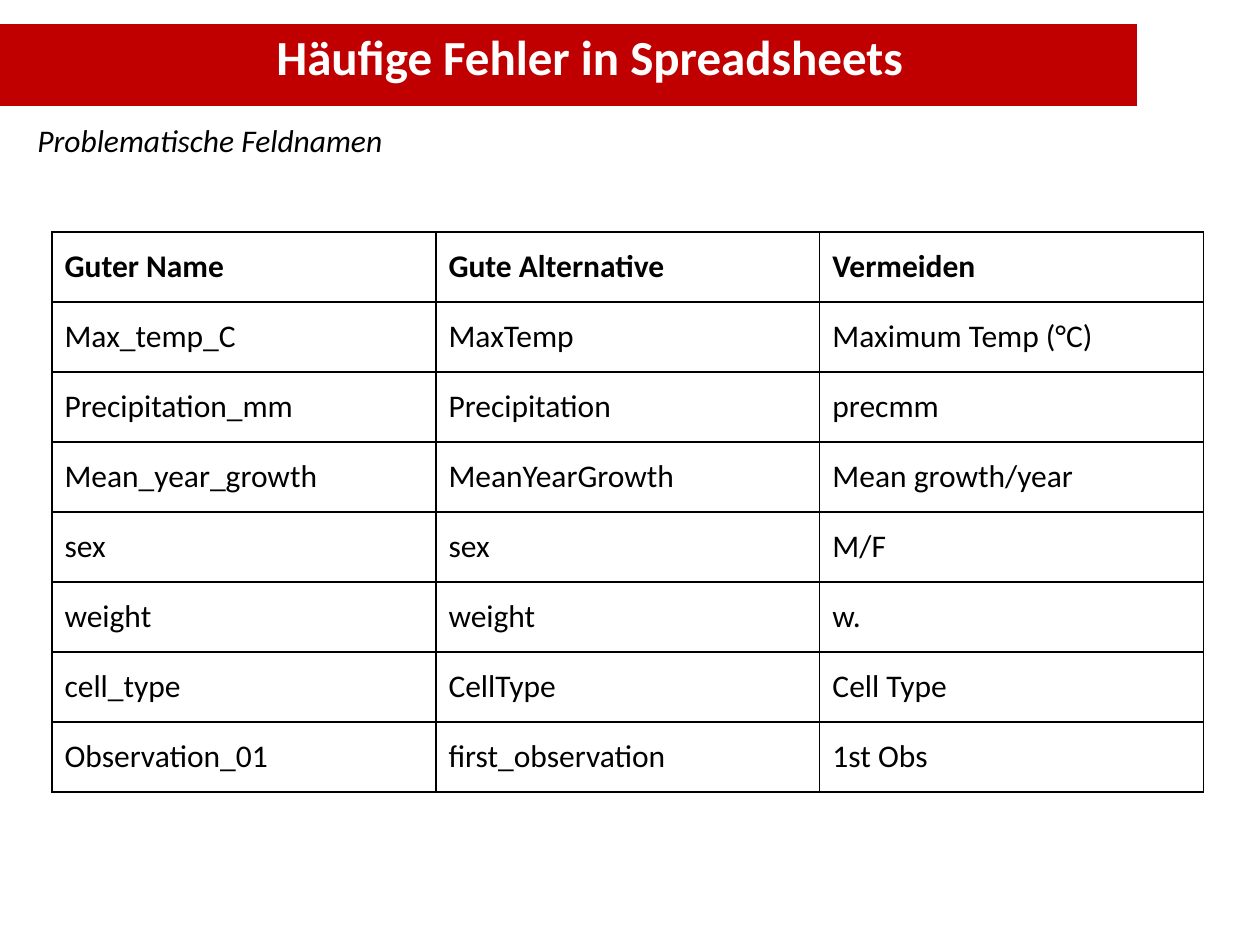
from lxml import etree
from pptx import Presentation
from pptx.dml.color import RGBColor
from pptx.enum.shapes import MSO_SHAPE
from pptx.enum.text import MSO_ANCHOR, MSO_AUTO_SIZE
from pptx.oxml.ns import qn
from pptx.util import Pt

RECTANGLE = MSO_SHAPE.RECTANGLE
MIDDLE = MSO_ANCHOR.MIDDLE
FIT_SHAPE = MSO_AUTO_SIZE.SHAPE_TO_FIT_TEXT

PX_PER_INCH = 126
EMU_PER_INCH = 914400
FONT = "Calibri"
COLORS = {"banner": "C00000", "title": "FFFFFF", "text": "000000", "border": "000000"}
BORDER_PT = 0.75

FIELD_NAMES = [
    ("Guter Name", "Gute Alternative", "Vermeiden"),
    ("Max_temp_C", "MaxTemp", "Maximum Temp (°C)"),
    ("Precipitation_mm", "Precipitation", "precmm"),
    ("Mean_year_growth", "MeanYearGrowth", "Mean growth/year"),
    ("sex", "sex", "M/F"),
    ("weight", "weight", "w."),
    ("cell_type", "CellType", "Cell Type"),
    ("Observation_01", "first_observation", "1st Obs"),
]
COLUMN_WIDTH = 384
ROW_HEIGHT = 70


def px(length):
    return round(length * EMU_PER_INCH / PX_PER_INCH)


def rgb(name):
    return RGBColor.from_string(COLORS[name])


def add_run(paragraph, text, size, color="text", bold=False, italic=False):
    run = paragraph.add_run()
    run.text = text
    run.font.name = FONT
    run.font.size = Pt(size)
    run.font.bold = bold
    run.font.italic = italic
    run.font.color.rgb = rgb(color)


def add_banner(slide, left, top, width, height):
    banner = slide.shapes.add_shape(RECTANGLE, px(left), px(top), px(width), px(height))
    banner.shadow.inherit = False
    banner.fill.solid()
    banner.fill.fore_color.rgb = rgb("banner")
    banner.line.fill.background()


def add_heading(slide, left, top, width, height, text, size, **style):
    """Add a one-line text box that fits its text."""
    heading = slide.shapes.add_textbox(px(left), px(top), px(width), px(height))
    frame = heading.text_frame
    frame.word_wrap = False
    frame.auto_size = FIT_SHAPE
    add_run(frame.paragraphs[0], text, size, **style)


def draw_borders(cell):
    properties = cell._tc.get_or_add_tcPr()
    for side in ("a:lnL", "a:lnR", "a:lnT", "a:lnB"):
        line = etree.SubElement(properties, qn(side), w=str(Pt(BORDER_PT)))
        fill = etree.SubElement(line, qn("a:solidFill"))
        etree.SubElement(fill, qn("a:srgbClr"), val=COLORS["border"])


def add_name_table(slide, left, top, rows):
    """Add a bordered grid with equal cells and a bold first row."""
    row_count, column_count = len(rows), len(rows[0])
    table = slide.shapes.add_table(
        row_count, column_count, px(left), px(top),
        px(column_count * COLUMN_WIDTH), px(row_count * ROW_HEIGHT),
    ).table
    table.horz_banding = False
    for column in table.columns:
        column.width = px(COLUMN_WIDTH)
    for row_index, names in enumerate(rows):
        table.rows[row_index].height = px(ROW_HEIGHT)
        for column_index, name in enumerate(names):
            cell = table.cell(row_index, column_index)
            cell.vertical_anchor = MIDDLE
            draw_borders(cell)
            cell.fill.background()
            add_run(cell.text_frame.paragraphs[0], name, 18, bold=row_index == 0)


def main():
    presentation = Presentation()
    presentation.slide_width = px(1260)
    presentation.slide_height = px(945)
    slide = presentation.slides.add_slide(presentation.slide_layouts[6])

    add_banner(slide, 0, 24, 1137, 82)
    add_heading(slide, 264, 20, 660, 72, "Häufige Fehler in Spreadsheets", 28,
                color="title", bold=True)
    add_name_table(slide, 52, 232, FIELD_NAMES)
    add_heading(slide, 25, 115, 374, 50, "Problematische Feldnamen", 18, italic=True)

    presentation.save("out.pptx")


if __name__ == "__main__":
    main()
